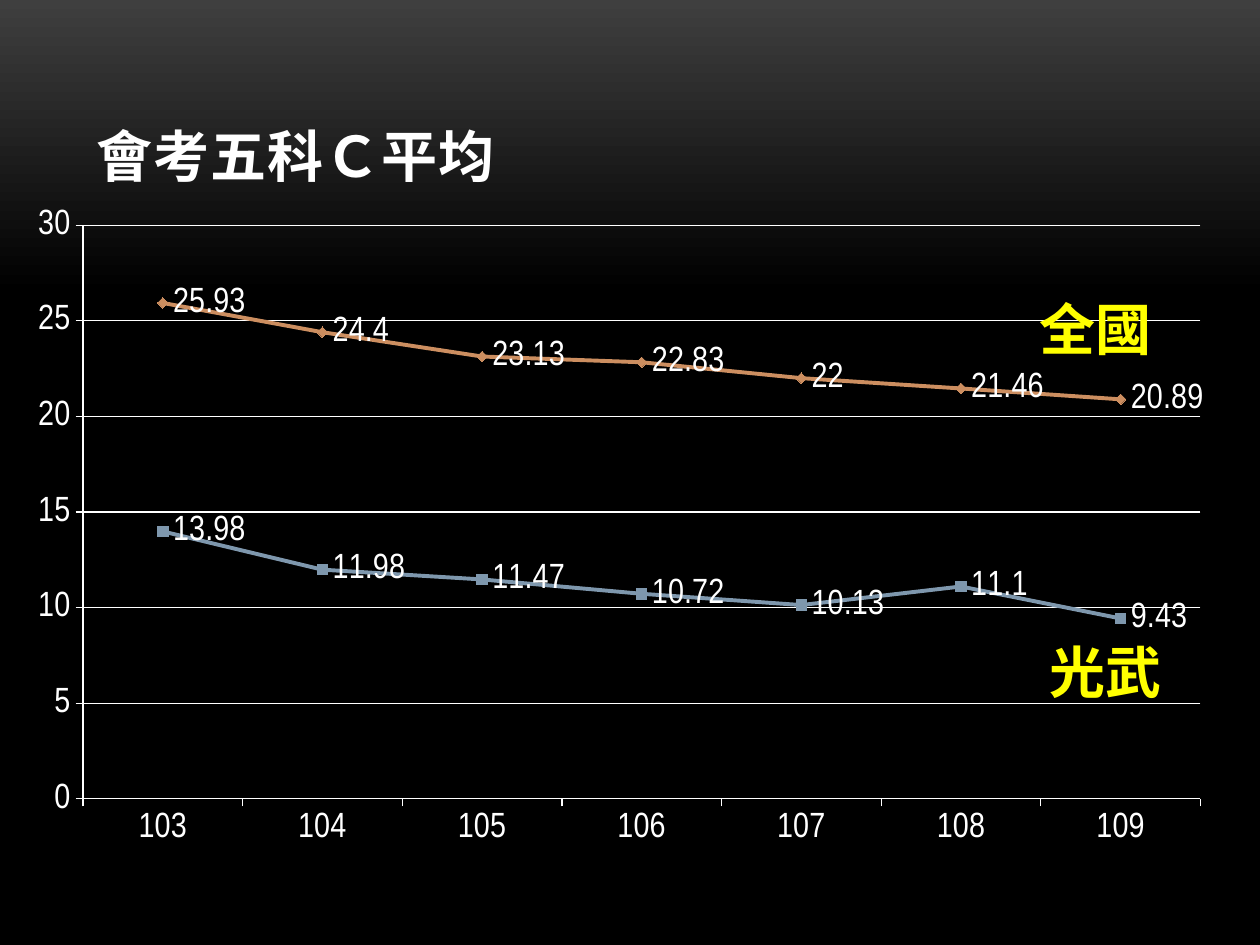
"""Build a slide with a line chart of two score series by year."""
from dataclasses import dataclass

from lxml import etree
from pptx import Presentation
from pptx import util as u
from pptx.chart.data import CategoryChartData
from pptx.dml.color import RGBColor
from pptx.enum import chart as ch, text
from pptx.oxml.ns import qn

WIDE, HIGH = u.Inches(10), u.Inches(7.5)


@dataclass(frozen=True)
class Theme:
    """Colours, fonts and type sizes."""
    glow: str = "3F3F3F"
    base: str = "000000"
    ink: str = "FFFFFF"
    mark: str = "FFFF00"
    cool: str = "7E97AD"
    warm: str = "CC8E60"
    face: str = "Arial Narrow"
    tag: str = "Arial"
    big: int = 32
    small: int = 20


@dataclass(frozen=True)
class Box:
    """A place on the slide in percent of its size."""
    left: float
    top: float
    width: float
    height: float

    def place(self) -> tuple:
        """Return the place as lengths."""
        sides = (WIDE, HIGH, WIDE, HIGH)
        shares = (self.left, self.top, self.width, self.height)
        return tuple(int(side * share / 100) for side, share in zip(sides, shares))


@dataclass(frozen=True)
class Label:
    """A line of bold text."""
    words: str
    box: Box
    face: str
    tint: str
    wrap: bool = False
    anchor: text.MSO_ANCHOR = text.MSO_ANCHOR.TOP
    track: int = 0


@dataclass(frozen=True)
class Trend:
    """One line of the chart."""
    name: str
    points: tuple
    tint: str
    dot: ch.XL_MARKER_STYLE
    size: int


THEME = Theme()
YEARS = [str(year) for year in range(103, 110)]
CHART = Box(1.2, 20.67, 96.1, 70.27)
PLOT = {"x": 0.056, "y": 0.045, "w": 0.923, "h": 0.864}
TRENDS = (
    Trend("Series 1", (13.98, 11.98, 11.47, 10.72, 10.13, 11.1, 9.43),
          THEME.cool, ch.XL_MARKER_STYLE.SQUARE, 6),
    Trend("Series 2", (25.93, 24.4, 23.13, 22.83, 22, 21.46, 20.89),
          THEME.warm, ch.XL_MARKER_STYLE.DIAMOND, 6),
)
LABELS = (
    Label("會考五科Ｃ平均", Box(6.7, 4, 86.7, 16.67), THEME.face, THEME.ink,
          True, text.MSO_ANCHOR.BOTTOM, 50),
    Label("光武", Box(82.3, 66.8, 11, 8.53), THEME.tag, THEME.mark),
    Label("全國", Box(81.5, 30.53, 11, 8.53), THEME.tag, THEME.mark),
)


def apply(target, values: dict) -> None:
    """Set each named attribute on the target."""
    for name, value in values.items():
        setattr(target, name, value)


def style(font, face: str, size: int, tint: str, bold: bool = False) -> None:
    """Set the look of a font."""
    apply(font, {"name": face, "size": u.Pt(size), "bold": bold})
    font.color.rgb = RGBColor.from_string(tint)


def shade(slide) -> None:
    """Fade the slide from grey at the top to black."""
    fill = slide.background.fill
    fill.gradient()
    fill.gradient_angle = 270
    for stop, place, tint in zip(fill.gradient_stops, (0, 0.31), (THEME.glow, THEME.base)):
        stop.position = place
        stop.color.rgb = RGBColor.from_string(tint)


def write(slide, label: Label) -> None:
    """Add a label to the slide."""
    frame = slide.shapes.add_textbox(*label.box.place()).text_frame
    fit = text.MSO_AUTO_SIZE.NONE if label.wrap else text.MSO_AUTO_SIZE.SHAPE_TO_FIT_TEXT
    apply(frame, {"word_wrap": label.wrap, "vertical_anchor": label.anchor, "auto_size": fit})
    run = frame.paragraphs[0].add_run()
    run.text = label.words
    style(run.font, label.face, THEME.big, label.tint, True)
    if label.track:
        run.font._element.set("spc", str(label.track))


def fix_plot(chart) -> None:
    """Pin the inner plot area to its share of the chart."""
    area = chart._chartSpace.chart.plotArea
    for old in area.findall(qn("c:layout")):
        area.remove(old)
    layout = etree.Element(qn("c:layout"))
    manual = etree.SubElement(layout, qn("c:manualLayout"))
    modes = {"layoutTarget": "inner", "xMode": "edge", "yMode": "edge"}
    for name, value in {**modes, **PLOT}.items():
        etree.SubElement(manual, qn(f"c:{name}")).set("val", str(value))
    area.insert(0, layout)


def rule(line) -> None:
    """Draw a thin light line."""
    line.color.rgb = RGBColor.from_string(THEME.ink)
    line.width = u.Pt(0.75)


def paint(series, trend: Trend) -> None:
    """Colour a series and show its values."""
    tint = RGBColor.from_string(trend.tint)
    series.smooth = False
    series.format.line.color.rgb = tint
    series.format.line.width = u.Pt(2.25)
    apply(series.marker, {"style": trend.dot, "size": trend.size})
    series.marker.format.fill.solid()
    series.marker.format.fill.fore_color.rgb = tint
    series.marker.format.line.color.rgb = tint
    tags = series.data_labels
    apply(tags, {"show_value": True, "position": ch.XL_LABEL_POSITION.RIGHT})
    style(tags.font, THEME.face, THEME.small, THEME.ink)


def plot(slide) -> None:
    """Add the line chart."""
    data = CategoryChartData()
    data.categories = YEARS
    for trend in TRENDS:
        data.add_series(trend.name, trend.points)
    chart = slide.shapes.add_chart(ch.XL_CHART_TYPE.LINE_MARKERS, *CHART.place(), data).chart
    apply(chart, {"has_legend": False, "has_title": False})
    style(chart.font, THEME.face, THEME.small, THEME.ink)
    chart.plots[0].vary_by_categories = False
    ticks = {"major_tick_mark": ch.XL_TICK_MARK.OUTSIDE,
             "minor_tick_mark": ch.XL_TICK_MARK.NONE}
    for axis in (chart.category_axis, chart.value_axis):
        apply(axis, ticks)
        rule(axis.format.line)
    scale = {"minimum_scale": 0, "maximum_scale": 30, "major_unit": 5,
             "has_major_gridlines": True}
    apply(chart.value_axis, scale)
    rule(chart.value_axis.major_gridlines.format.line)
    for series, trend in zip(chart.plots[0].series, TRENDS):
        paint(series, trend)
    fix_plot(chart)


def main() -> None:
    """Build and save the deck."""
    deck = Presentation()
    apply(deck, {"slide_width": WIDE, "slide_height": HIGH})
    slide = deck.slides.add_slide(deck.slide_layouts[6])
    shade(slide)
    plot(slide)
    for label in LABELS:
        write(slide, label)
    deck.save("out.pptx")


if __name__ == "__main__":
    main()
